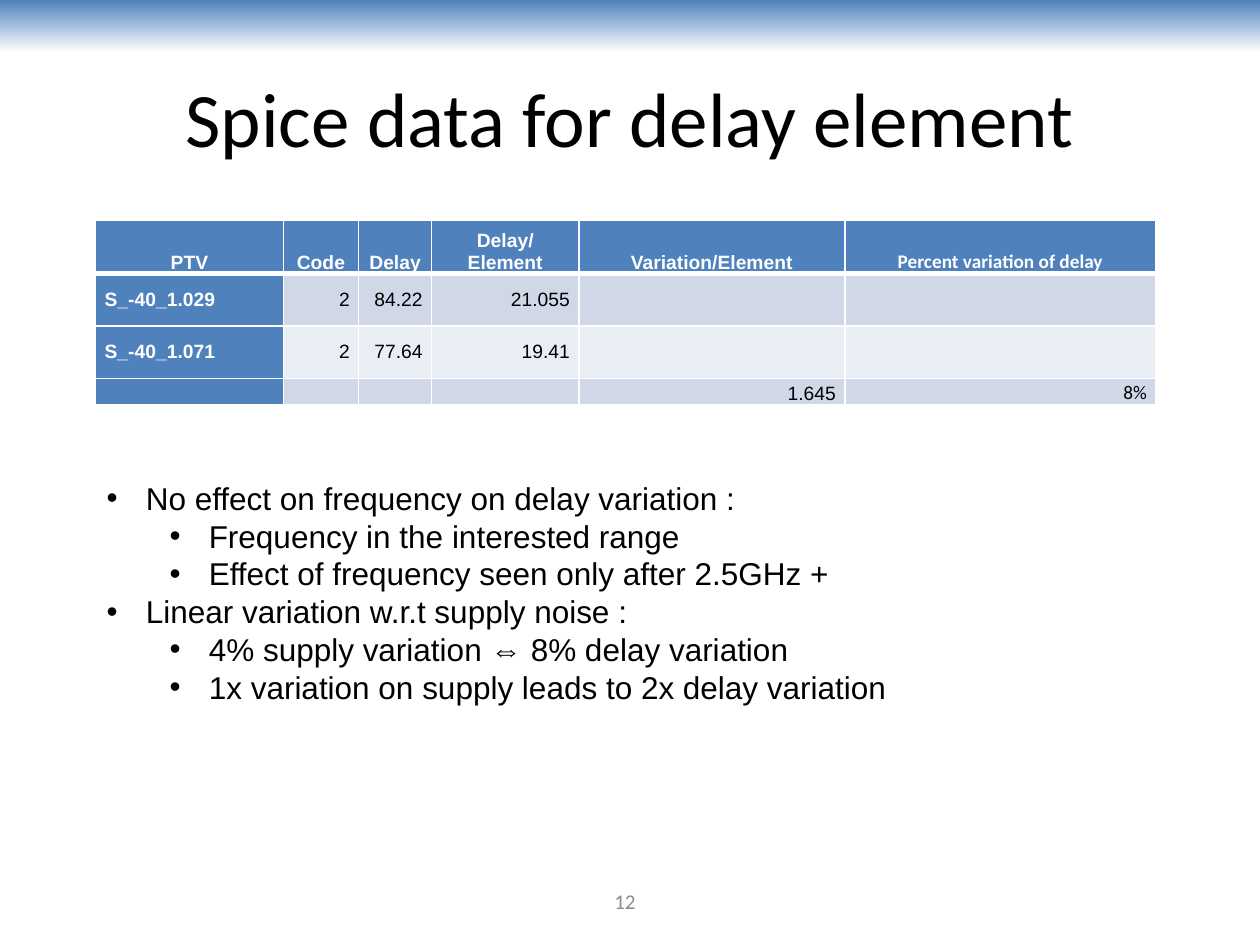
from lxml.etree import SubElement
from pptx import Presentation
from pptx.dml.color import RGBColor
from pptx.enum.shapes import MSO_SHAPE
from pptx.enum.text import MSO_ANCHOR, PP_ALIGN
from pptx.oxml.ns import qn
from pptx.util import Cm, Pt

HUES = {"blue": "4F81BD", "white": "FFFFFF", "black": "000000",
        "gray": "8C8C8C", "dark": "D0D8E8", "light": "E9EDF4"}
WIDTHS = [3.78, 1.52, 1.47, 2.97, 5.36, 6.27]
HEIGHTS = [1.06, 1.06, 1.06, 0.53]
ROWS = [
    ["PTV", "Code", "Delay", "Delay/Element", "Variation/Element",
     "Percent variation of delay"],
    ["S_-40_1.029", "2", "84.22", "21.055", "", ""],
    ["S_-40_1.071", "2", "77.64", "19.41", "", ""],
    ["", "", "", "", "1.645", "8%"],
]
POINTS = [
    (0, "No effect on frequency on delay variation :"),
    (1, "Frequency in the interested range"),
    (1, "Effect of frequency seen only after 2.5GHz +"),
    (0, "Linear variation w.r.t supply noise :"),
    (1, "4% supply variation ⇔ 8% delay variation"),
    (1, "1x variation on supply leads to 2x delay variation"),
]


class Deck:
    def __init__(self):
        self.show = Presentation()
        self.show.slide_width, self.show.slide_height = Cm(25.4), Cm(19.05)
        self.slide = self.show.slides.add_slide(self.show.slide_layouts[6])

    def hue(self, name):
        return RGBColor.from_string(HUES[name])

    def run(self, para, text, size, face, hue, bold=False):
        run = para.add_run()
        run.text = text
        font = run.font
        font.size, font.name, font.bold = Pt(size), face, bold
        font.color.rgb = self.hue(hue)

    def band(self, box):
        shape = self.slide.shapes.add_shape(MSO_SHAPE.RECTANGLE, *map(Cm, box))
        shape.shadow.inherit = False
        shape.line.fill.background()
        shape.fill.gradient()
        shape.fill.gradient_angle = 270
        for stop, place, hue in zip(shape.fill.gradient_stops, (0, 1), ("blue", "white")):
            stop.position = place
            stop.color.rgb = self.hue(hue)

    def frame(self, box, anchor):
        frame = self.slide.shapes.add_textbox(*map(Cm, box)).text_frame
        frame.word_wrap = True
        frame.vertical_anchor = anchor
        return frame

    def label(self, box, text, size, hue):
        para = self.frame(box, MSO_ANCHOR.MIDDLE).paragraphs[0]
        para.alignment = PP_ALIGN.CENTER
        self.run(para, text, size, "Calibri", hue)

    def bullets(self, box, points):
        frame = self.frame(box, MSO_ANCHOR.TOP)
        for num, (level, text) in enumerate(points):
            para = frame.add_paragraph() if num else frame.paragraphs[0]
            para.level = level
            props = para._p.get_or_add_pPr()
            props.set("marL", str(Cm(0.79 + 1.27 * level)))
            props.set("indent", str(Cm(-0.79)))
            SubElement(props, qn("a:buFont"), typeface="Arial")
            SubElement(props, qn("a:buChar"), char="•")
            self.run(para, text, 18, "Arial", "black")

    def edge(self, cell, side, width):
        line = SubElement(cell._tc.get_or_add_tcPr(), qn("a:" + side), w=str(Pt(width)))
        fill = SubElement(line, qn("a:solidFill"))
        SubElement(fill, qn("a:srgbClr"), val=HUES["white"])

    def cell(self, cell, text, row, col):
        head, last = row == 0, row == len(ROWS) - 1
        strong = head or col == 0
        cell.margin_left = cell.margin_right = Cm(0.18)
        cell.margin_top = cell.margin_bottom = 0
        cell.vertical_anchor = MSO_ANCHOR.BOTTOM if head or last else MSO_ANCHOR.MIDDLE
        for side in ("lnL", "lnR", "lnT", "lnB"):
            thick = (head and side == "lnB") or (row == 1 and side == "lnT")
            self.edge(cell, side, 3 if thick else 1)
        cell.fill.solid()
        cell.fill.fore_color.rgb = self.hue(
            "blue" if strong else "dark" if row % 2 else "light")
        para = cell.text_frame.paragraphs[0]
        if not text:
            SubElement(para._p, qn("a:endParaRPr"), sz="1100")
            return
        para.alignment = (PP_ALIGN.CENTER if head else
                          PP_ALIGN.LEFT if strong else PP_ALIGN.RIGHT)
        face = "Calibri" if col == len(WIDTHS) - 1 else "Arial"
        self.run(para, text, 11, face, "white" if strong else "black", strong)

    def table(self, left, top):
        table = self.slide.shapes.add_table(
            len(ROWS), len(WIDTHS), Cm(left), Cm(top),
            Cm(sum(WIDTHS)), Cm(sum(HEIGHTS))).table
        for col, width in zip(table.columns, WIDTHS):
            col.width = Cm(width)
        for row, height in zip(table.rows, HEIGHTS):
            row.height = Cm(height)
        for row, texts in enumerate(ROWS):
            for col, text in enumerate(texts):
                self.cell(table.cell(row, col), text, row, col)


def main():
    deck = Deck()
    deck.band((0, 0, 25.4, 1.06))
    deck.label((1.27, 0.76, 22.86, 3.18), "Spice data for delay element", 44, "black")
    deck.label((10.16, 17.65, 4.88, 1.02), "12", 12, "gray")
    deck.table(1.93, 4.45)
    deck.bullets((1.9, 9.53, 21.4, 4.88), POINTS)
    deck.show.save("out.pptx")


if __name__ == "__main__":
    main()
